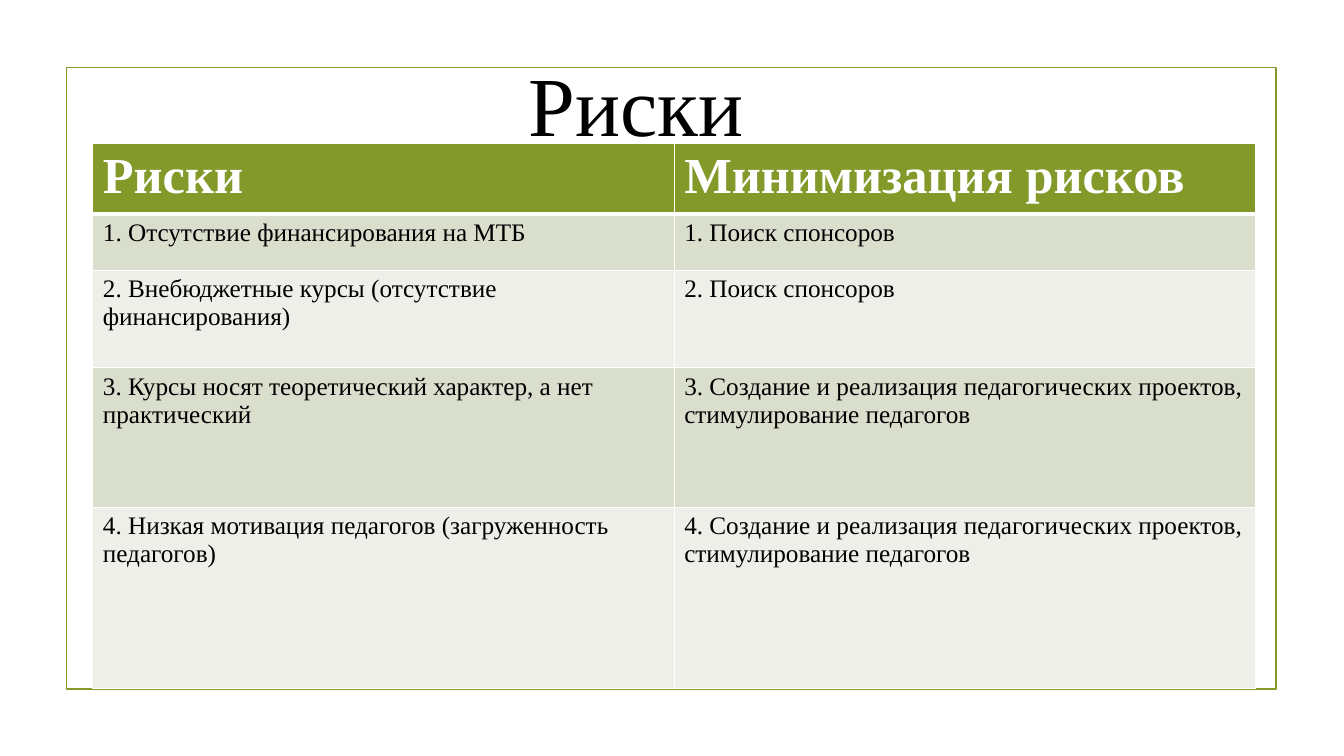
from typing import NamedTuple

from lxml import etree
from pptx import Presentation
from pptx.dml.color import RGBColor
from pptx.enum.shapes import MSO_SHAPE
from pptx.oxml.ns import qn
from pptx.util import Cm, Pt

RECT = MSO_SHAPE.RECTANGLE
FONT = "Times New Roman"
GREEN, WHITE, BLACK = "83992A", "FFFFFF", "000000"
BANDS = ("D9DECD", "EDEFE8")
COL_WIDTH = 14.65


class Row(NamedTuple):
    height: float
    risk: str
    remedy: str


ROWS = [
    Row(1.68, "Риски", "Минимизация рисков"),
    Row(1.42, "1. Отсутствие финансирования на МТБ", "1. Поиск спонсоров"),
    Row(2.46, "2. Внебюджетные курсы (отсутствие финансирования)",
        "2. Поиск спонсоров"),
    Row(3.51, "3. Курсы носят теоретический характер, а нет практический",
        "3. Создание и реализация педагогических проектов, "
        "стимулирование педагогов"),
    Row(4.57, "4. Низкая мотивация педагогов (загруженность педагогов)",
        "4. Создание и реализация педагогических проектов, "
        "стимулирование педагогов"),
]


def color(code: str) -> RGBColor:
    return RGBColor.from_string(code)


def add_run(frame, text: str, size: int, code: str, bold: bool = False) -> None:
    run = frame.paragraphs[0].add_run()
    run.text = text
    font = run.font
    font.name, font.size, font.bold = FONT, Pt(size), bold
    font.color.rgb = color(code)


def add_edges(cell, top: int, bottom: int) -> None:
    """Draw white cell borders; must come before the cell's fill."""
    props = cell._tc.get_or_add_tcPr()
    for tag, width in (("lnL", 1), ("lnR", 1), ("lnT", top), ("lnB", bottom)):
        line = etree.SubElement(props, qn(f"a:{tag}"), w=str(Pt(width)))
        fill = etree.SubElement(line, qn("a:solidFill"))
        etree.SubElement(fill, qn("a:srgbClr"), val=WHITE)


def add_frame(slide) -> None:
    frame = slide.shapes.add_shape(RECT, Cm(1.68), Cm(1.7), Cm(30.48), Cm(15.67))
    frame.shadow.inherit = False
    frame.fill.background()
    frame.line.color.rgb = color(GREEN)
    frame.line.width = Pt(1.25)


def add_title(slide) -> None:
    box = slide.shapes.add_textbox(Cm(13.08), Cm(1.19), Cm(6.4), Cm(3.58))
    box.text_frame.word_wrap = False
    add_run(box.text_frame, "Риски", 60, BLACK)


def add_risks(slide) -> None:
    height = sum(row.height for row in ROWS)
    table = slide.shapes.add_table(
        len(ROWS), 2, Cm(2.34), Cm(3.61), Cm(2 * COL_WIDTH), Cm(height)).table
    for col in table.columns:
        col.width = Cm(COL_WIDTH)
    for i, row in enumerate(ROWS):
        head = i == 0
        table.rows[i].height = Cm(row.height)
        for j, text in enumerate((row.risk, row.remedy)):
            cell = table.cell(i, j)
            add_edges(cell, 3 if i == 1 else 1, 3 if head else 1)
            cell.fill.solid()
            cell.fill.fore_color.rgb = color(GREEN if head else BANDS[(i - 1) % 2])
            add_run(cell.text_frame, text, 36 if head else 18,
                    WHITE if head else BLACK, head)


def main() -> None:
    deck = Presentation()
    deck.slide_width, deck.slide_height = Cm(33.87), Cm(19.05)
    slide = deck.slides.add_slide(deck.slide_layouts[6])
    add_frame(slide)
    add_title(slide)
    add_risks(slide)
    deck.save("out.pptx")


if __name__ == "__main__":
    main()
